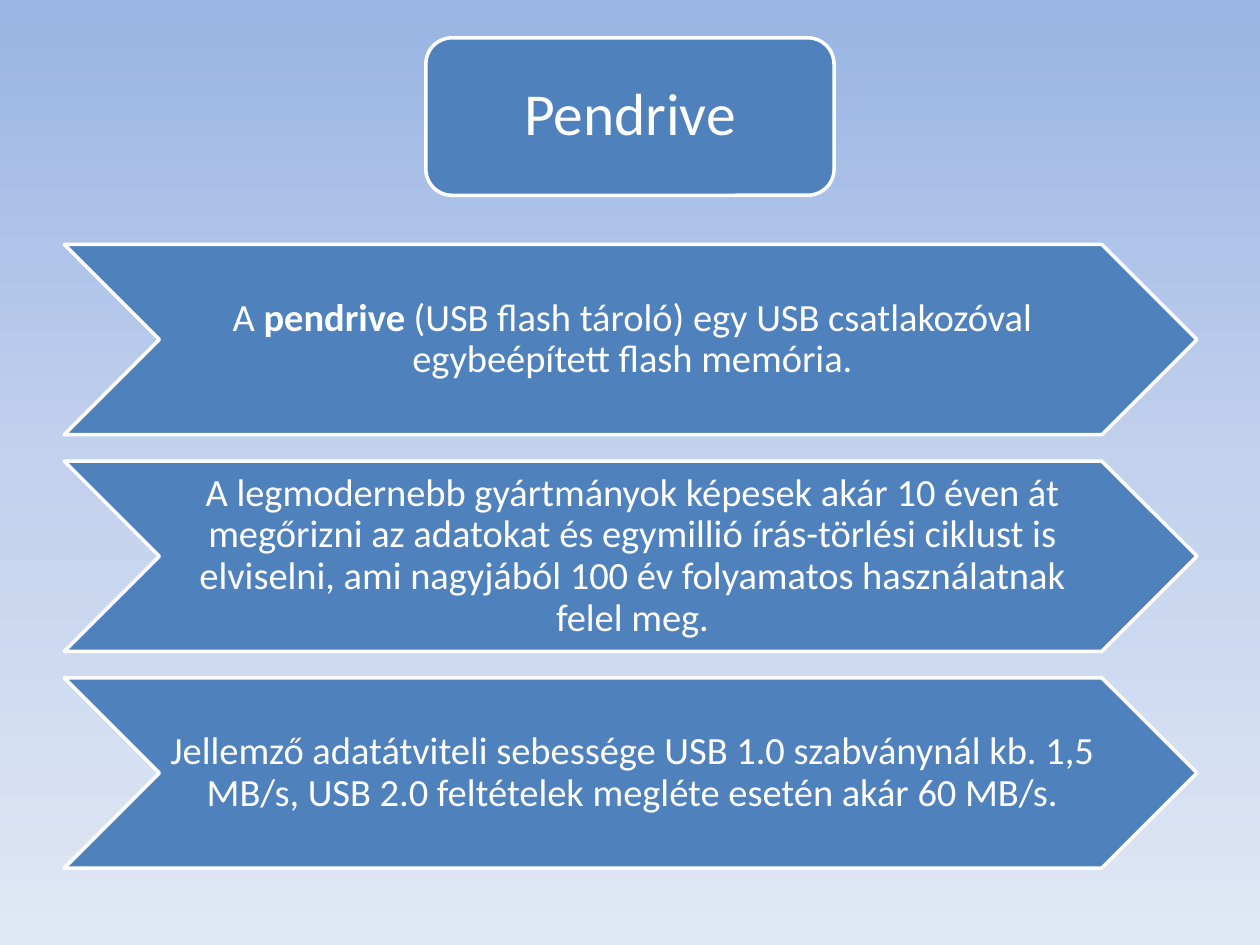
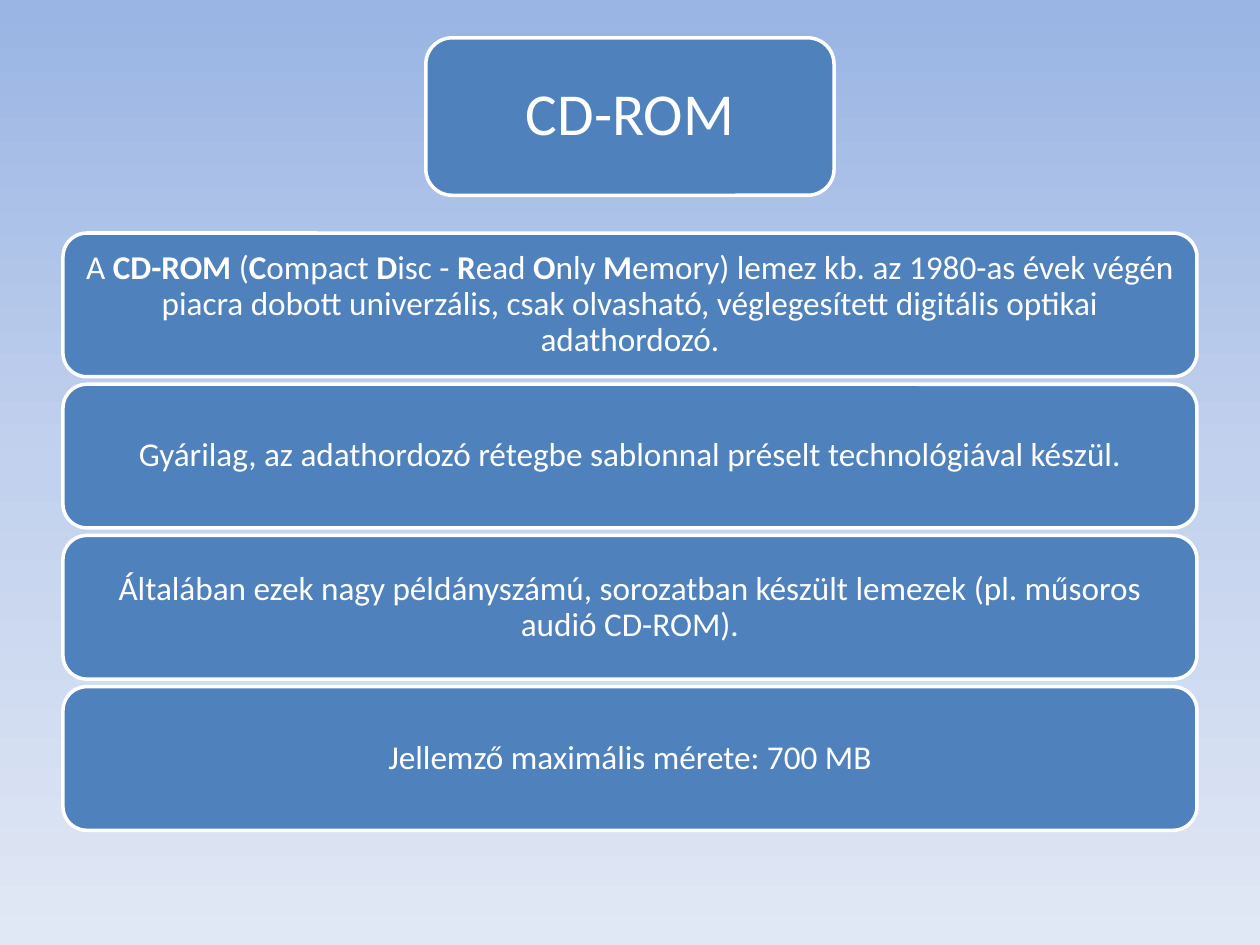
from copy import deepcopy

from pptx import Presentation
from pptx.dml.color import RGBColor
from pptx.enum.shapes import MSO_SHAPE
from pptx.enum.text import MSO_ANCHOR, MSO_AUTO_SIZE, PP_ALIGN
from pptx.oxml.ns import qn
from pptx.util import Inches, Pt

CHEVRON = MSO_SHAPE.CHEVRON
ROUNDED = MSO_SHAPE.ROUNDED_RECTANGLE
MIDDLE = MSO_ANCHOR.MIDDLE
CENTER = PP_ALIGN.CENTER
NO_AUTOFIT = MSO_AUTO_SIZE.NONE

SLIDE_WIDTH, SLIDE_HEIGHT = 10, 7.5
TITLE_ONLY = 5
FONT = "Calibri"
BLUE, WHITE = "4F81BD", "FFFFFF"
BACKGROUND_STOPS = [(0, "9AB5E4"), (0.5, "C2D1ED"), (1, "E1E8F5")]
TITLE_CARD = (3.38, 0.3, 3.24, 1.25)
TITLE_AREA = (3.44, 0.36, 3.12, 1.13)
TITLE_SIZE = 34
TITLE_INSETS = (0.14, 0.07, 0.14, 0.07)

CHEVRON_ROWS = {
    "kind": CHEVRON, "left": 0.51, "top": 1.94, "width": 8.99, "height": 1.51,
    "step": 1.72, "size": 22, "insets": (0.03, 0.02, 0, 0.02),
}
CARD_ROWS = {
    "kind": ROUNDED, "left": 0.5, "top": 1.85, "width": 9, "height": 1.14,
    "step": 1.2, "size": 19, "insets": (0.08, 0.08, 0.08, 0.08),
}

SLIDES = [
    ("Pendrive", CHEVRON_ROWS, [
        "A *pendrive* (USB flash tároló) egy USB csatlakozóval egybeépített flash memória.",
        "A legmodernebb gyártmányok képesek akár 10 éven át megőrizni az adatokat és "
        "egymillió írás-törlési ciklust is elviselni, ami nagyjából 100 év folyamatos "
        "használatnak felel meg.",
        "Jellemző adatátviteli sebessége USB 1.0 szabványnál kb. 1,5 MB/s, "
        "USB 2.0 feltételek megléte esetén akár 60 MB/s.",
    ]),
    ("CD-ROM", CARD_ROWS, [
        "A *CD-ROM* (*C*ompact *D*isc - *R*ead *O*nly *M*emory) lemez kb. az 1980-as évek "
        "végén piacra dobott univerzális, csak olvasható, véglegesített digitális optikai "
        "adathordozó.",
        "Gyárilag, az adathordozó rétegbe sablonnal préselt technológiával készül.",
        "Általában ezek nagy példányszámú, sorozatban készült lemezek "
        "(pl. műsoros audió CD-ROM).",
        "Jellemző maximális mérete: 700 MB",
    ]),
]


def color(hex_code):
    return RGBColor.from_string(hex_code)


def set_all(target, values):
    for name, value in values.items():
        setattr(target, name, value)


def paint_background(master):
    fill = master.background.fill
    fill.gradient()
    fill.gradient_angle = 270
    stop_list = master.element.find(".//" + qn("a:gsLst"))
    stop_list.append(deepcopy(stop_list[-1]))
    for stop, (position, hex_code) in zip(fill.gradient_stops, BACKGROUND_STOPS):
        stop.position = position
        stop.color.rgb = color(hex_code)


def add_panel(slide, kind, area):
    panel = slide.shapes.add_shape(kind, *map(Inches, area))
    panel.shadow.inherit = False
    panel.fill.solid()
    panel.fill.fore_color.rgb = color(BLUE)
    panel.line.color.rgb = color(WHITE)
    panel.line.width = Pt(2)
    return panel


def write(box, text, size, insets):
    frame = box.text_frame
    left, top, right, bottom = map(Inches, insets)
    set_all(frame, {
        "word_wrap": True, "auto_size": NO_AUTOFIT, "vertical_anchor": MIDDLE,
        "margin_left": left, "margin_top": top,
        "margin_right": right, "margin_bottom": bottom,
    })
    para = frame.paragraphs[0]
    set_all(para, {"alignment": CENTER, "line_spacing": 0.9})
    for index, part in enumerate(text.split("*")):
        span = para.add_run()
        span.text = part
        set_all(span.font, {"name": FONT, "size": Pt(size), "bold": index % 2 == 1})
        span.font.color.rgb = color(WHITE)


def add_title(slide, text):
    card = add_panel(slide, ROUNDED, TITLE_CARD)
    title = slide.shapes.title
    card.element.addnext(title.element)
    set_all(title, dict(zip(("left", "top", "width", "height"), map(Inches, TITLE_AREA))))
    write(title, text, TITLE_SIZE, TITLE_INSETS)


def add_rows(slide, rows, texts):
    for index, text in enumerate(texts):
        top = rows["top"] + index * rows["step"]
        area = (rows["left"], top, rows["width"], rows["height"])
        panel = add_panel(slide, rows["kind"], area)
        write(panel, text, rows["size"], rows["insets"])


def main():
    deck = Presentation()
    deck.slide_width, deck.slide_height = Inches(SLIDE_WIDTH), Inches(SLIDE_HEIGHT)
    paint_background(deck.slide_master)
    for title, rows, texts in SLIDES:
        slide = deck.slides.add_slide(deck.slide_layouts[TITLE_ONLY])
        add_title(slide, title)
        add_rows(slide, rows, texts)
    deck.save("out.pptx")


if __name__ == "__main__":
    main()
